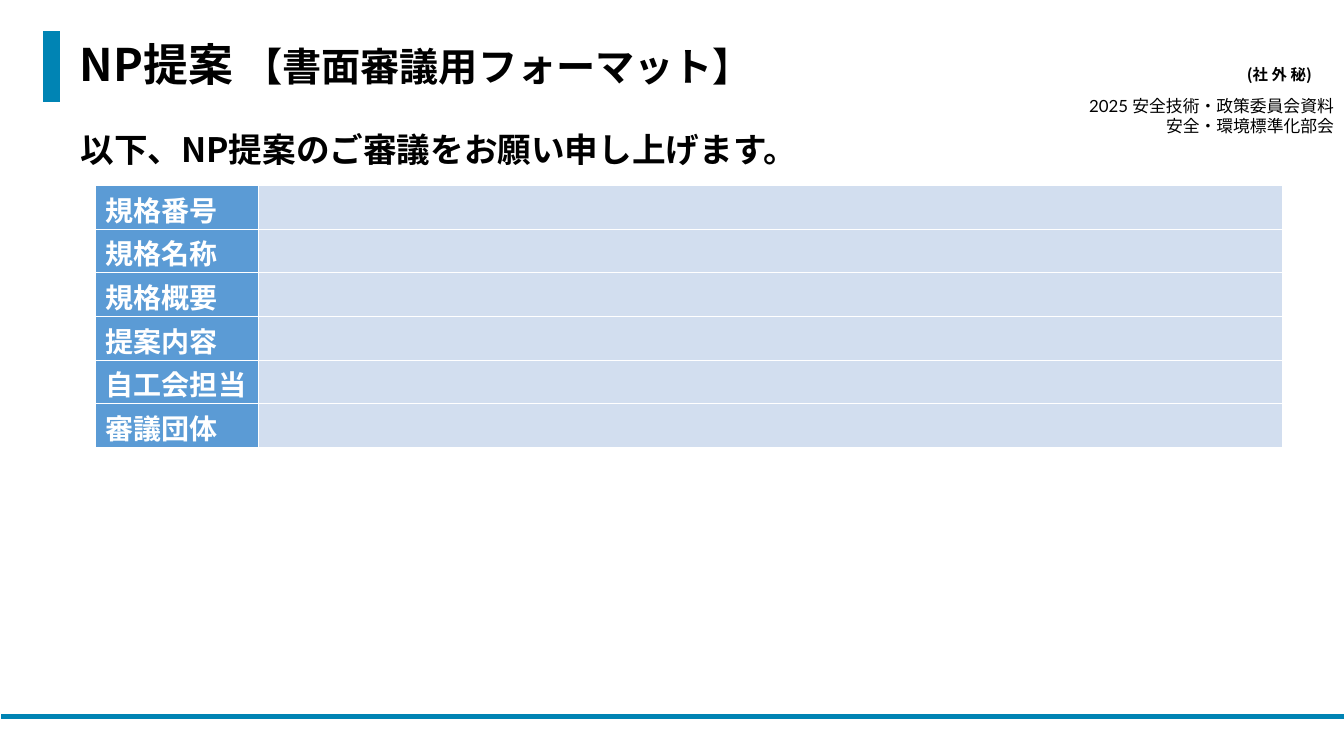
from lxml import etree
from pptx import Presentation
from pptx.dml.color import RGBColor
from pptx.enum.lang import MSO_LANGUAGE_ID
from pptx.enum.shapes import MSO_SHAPE
from pptx.enum.text import MSO_ANCHOR, MSO_AUTO_SIZE, PP_ALIGN
from pptx.oxml.ns import qn
from pptx.util import Inches, Pt

MINUS = MSO_SHAPE.MATH_MINUS
LEFT, RIGHT = PP_ALIGN.LEFT, PP_ALIGN.RIGHT
TOP, BOTTOM = MSO_ANCHOR.TOP, MSO_ANCHOR.BOTTOM
NO_FIT = MSO_AUTO_SIZE.NONE
JAPANESE = MSO_LANGUAGE_ID.JAPANESE

HEADINGS = ["規格番号", "規格名称", "規格概要", "提案内容", "自工会担当", "審議団体"]


def color(value):
    return RGBColor.from_string(value)


def apply(target, values):
    for name, value in values.items():
        setattr(target, name, value)


class ProposalSlide:
    """Holds the style and the current slide, and adds each kind of element."""

    font = "Noto Sans CJK JP"
    accent, heading, cell = "0084B4", "5B9BD5", "D2DEEF"
    black, white = "000000", "FFFFFF"

    def __init__(self, page):
        self.page = page

    def place(self, shape, area):
        apply(shape, dict(zip(("left", "top", "width", "height"), map(Inches, area))))

    def fill_text(self, frame, lines, ink=black, bold=True, font=font, align=LEFT, spacing=None):
        for index, line in enumerate(lines):
            para = frame.add_paragraph() if index else frame.paragraphs[0]
            apply(para, {"alignment": align, "line_spacing": spacing})
            for text, size in line:
                span = para.add_run()
                span.text = text
                apply(span.font, {"size": Pt(size), "bold": bold, "name": font,
                                  "language_id": JAPANESE})
                span.font.color.rgb = color(ink)
                east = etree.Element(qn("a:ea"), typeface=self.font)
                span._r.get_or_add_rPr().find(qn("a:latin")).addnext(east)

    def title(self, area, line):
        box = self.page.shapes.title
        self.place(box, area)
        apply(box.text_frame, {"word_wrap": True, "auto_size": NO_FIT,
                               "vertical_anchor": BOTTOM})
        self.fill_text(box.text_frame, [line], spacing=1.2)

    def text(self, area, lines, **style):
        box = self.page.shapes.add_textbox(*map(Inches, area))
        apply(box.text_frame, {"word_wrap": True, "vertical_anchor": TOP})
        self.fill_text(box.text_frame, lines, **style)

    def bar(self, area, rotation=0):
        shape = self.page.shapes.add_shape(MINUS, *map(Inches, area))
        shape.rotation = rotation
        shape.shadow.inherit = False
        shape.fill.solid()
        shape.fill.fore_color.rgb = color(self.accent)
        shape.line.fill.background()

    def border(self, cell):
        properties = cell._tc.get_or_add_tcPr()
        for index, side in enumerate(("lnL", "lnR", "lnT", "lnB")):
            line = etree.Element(qn(f"a:{side}"), w=str(Pt(1)))
            fill = etree.SubElement(line, qn("a:solidFill"))
            etree.SubElement(fill, qn("a:srgbClr"), val=self.white)
            properties.insert(index, line)

    def table(self, area, widths, headings):
        grid = self.page.shapes.add_table(len(headings), 2, *map(Inches, area)).table
        apply(grid, {"first_row": False, "horz_banding": False, "first_col": True})
        for column, width in zip(grid.columns, widths):
            column.width = Inches(width)
        for row, heading in zip(grid.rows, headings):
            for cell, fill in zip(row.cells, (self.heading, self.cell)):
                apply(cell, {"margin_top": Inches(0.03), "margin_bottom": 0})
                cell.fill.solid()
                cell.fill.fore_color.rgb = color(fill)
                self.border(cell)
            label = next(iter(row.cells))
            self.fill_text(label.text_frame, [[(heading, 20)]], ink=self.white)


def main():
    deck = Presentation()
    apply(deck, {"slide_width": Inches(13.33), "slide_height": Inches(7.5)})
    page = deck.slides.add_slide(deck.slide_layouts[0])
    subtitle = page.placeholders[1].element
    subtitle.getparent().remove(subtitle)

    slide = ProposalSlide(page)
    slide.bar((-2.4, 7, 18.15, 0.22))
    slide.text((11.61, 0.6, 1.5, 0.47), [[("(社 外 秘)", 11)]], align=RIGHT)
    slide.title((0.69, 0.08, 9.42, 0.87), [("NP提案 ", 32), ("【書面審議用フォーマット】", 28)])
    slide.text((10.37, 0.9, 2.96, 0.5),
               [[("2025 安全技術・政策委員会資料", 12)], [("安全・環境標準化部会", 12)]],
               bold=False, font="Lato", align=RIGHT)
    slide.bar((0.03, 0.3, 0.97, 0.72), rotation=90)
    slide.text((0.7, 1.23, 12.02, 0.7), [[("以下、NP提案のご審議をお願い申し上げます。", 24)]])
    slide.table((0.95, 1.84, 11.77, 2.6), (1.61, 10.16), HEADINGS)
    deck.save("out.pptx")


if __name__ == "__main__":
    main()
